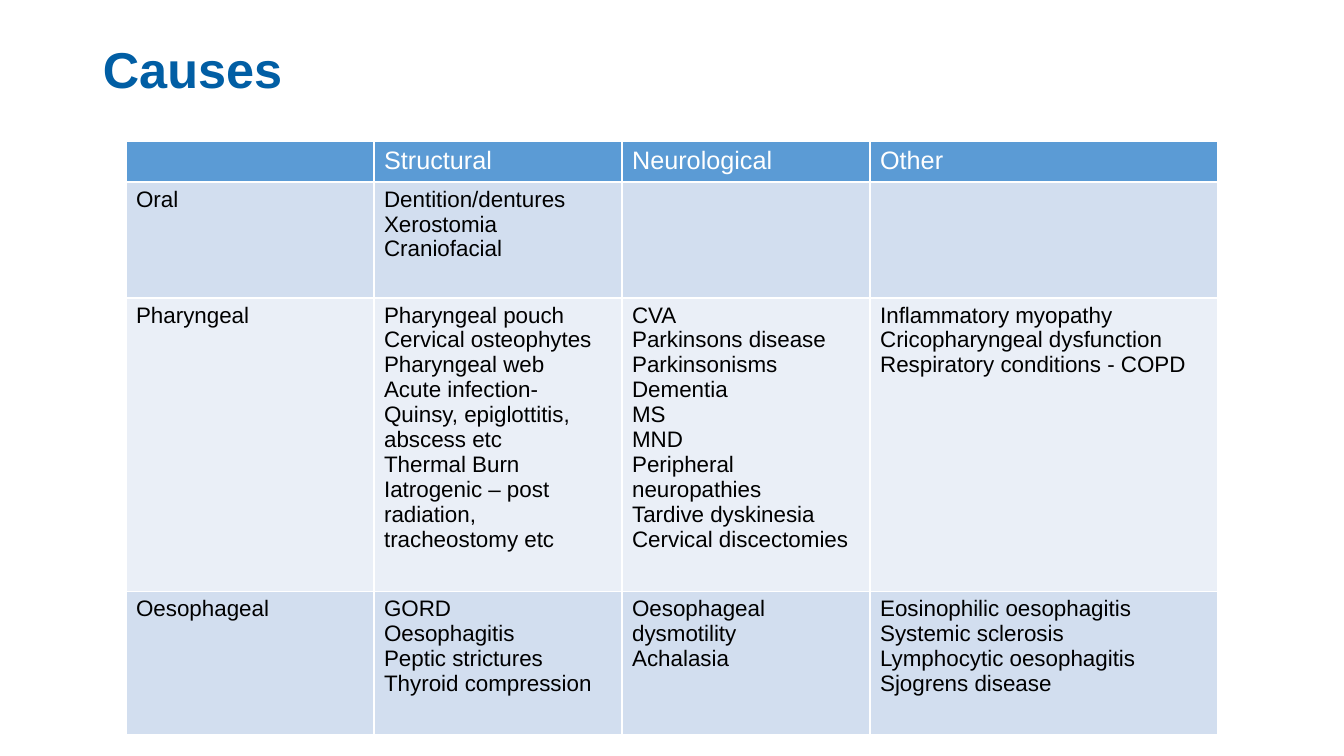
from lxml import etree
from pptx import Presentation
from pptx.dml.color import RGBColor
from pptx.enum.text import MSO_ANCHOR, PP_ALIGN
from pptx.oxml.ns import qn
from pptx.util import Inches, Pt

TOP = MSO_ANCHOR.TOP
LEFT = PP_ALIGN.LEFT

FONT = "Arial"
TITLE_BLUE = RGBColor(0x01, 0x5E, 0xA4)
HEADER_BLUE = RGBColor(0x5B, 0x9B, 0xD5)
BAND_DARK = RGBColor(0xD2, 0xDE, 0xEF)
BAND_LIGHT = RGBColor(0xEA, 0xEF, 0xF7)
WHITE = RGBColor(0xFF, 0xFF, 0xFF)
BLACK = RGBColor(0x00, 0x00, 0x00)

COL_WIDTHS = [2.46, 2.46, 2.46, 3.45]
ROW_HEIGHTS = [0.36, 1.15, 2.91, 1.42]
CAUSES = [
    [[], ["Structural"], ["Neurological"], ["Other"]],
    [["Oral"], ["Dentition/dentures", "Xerostomia", "Craniofacial"], [], []],
    [
        ["Pharyngeal"],
        ["Pharyngeal pouch", "Cervical osteophytes", "Pharyngeal web",
         "Acute infection- Quinsy, epiglottitis, abscess etc",
         "Thermal Burn", "Iatrogenic – post radiation, tracheostomy etc"],
        ["CVA", "Parkinsons disease", "Parkinsonisms", "Dementia", "MS", "MND",
         "Peripheral neuropathies", "Tardive dyskinesia",
         "Cervical discectomies"],
        ["Inflammatory myopathy", "Cricopharyngeal dysfunction",
         "Respiratory conditions - COPD"],
    ],
    [
        ["Oesophageal"],
        ["GORD", "Oesophagitis", "Peptic strictures", "Thyroid compression"],
        ["Oesophageal dysmotility", "Achalasia"],
        ["Eosinophilic oesophagitis", "Systemic sclerosis",
         "Lymphocytic oesophagitis", "Sjogrens disease"],
    ],
]


def add_run(p, text, size, color, bold=False):
    r = p.add_run()
    r.text = text
    r.font.name = FONT
    r.font.size = Pt(size)
    r.font.bold = bold
    r.font.color.rgb = color


def set_borders(cell, color, width):
    tc_pr = cell._tc.get_or_add_tcPr()
    for side in ("lnL", "lnR", "lnT", "lnB"):
        ln = etree.SubElement(tc_pr, qn(f"a:{side}"), w=str(Pt(width)))
        fill = etree.SubElement(ln, qn("a:solidFill"))
        etree.SubElement(fill, qn("a:srgbClr"), val=str(color))


def fill_cell(cell, lines, size, color, background):
    set_borders(cell, WHITE, 1)
    cell.fill.solid()
    cell.fill.fore_color.rgb = background
    tf = cell.text_frame
    for i, line in enumerate(lines):
        p = tf.add_paragraph() if i else tf.paragraphs[0]
        add_run(p, line, size, color)


def add_title(slide, text):
    title = slide.shapes.title
    title.left, title.top = Inches(0.92), Inches(0.4)
    title.width, title.height = Inches(11.5), Inches(1.45)
    tf = title.text_frame
    tf.vertical_anchor = TOP
    p = tf.paragraphs[0]
    p.alignment = LEFT
    p.line_spacing = 0.9
    add_run(p, text, 36, TITLE_BLUE, bold=True)


def add_causes_table(slide):
    frame = slide.shapes.add_table(
        len(ROW_HEIGHTS), len(COL_WIDTHS), Inches(1.25), Inches(1.4),
        Inches(sum(COL_WIDTHS)), Inches(sum(ROW_HEIGHTS)))
    table = frame.table
    for column, width in zip(table.columns, COL_WIDTHS):
        column.width = Inches(width)
    for row, height in zip(table.rows, ROW_HEIGHTS):
        row.height = Inches(height)
    for i, row in enumerate(CAUSES):
        if i == 0:
            style = (18, WHITE, HEADER_BLUE)
        else:
            style = (16, BLACK, BAND_DARK if i % 2 else BAND_LIGHT)
        for j, lines in enumerate(row):
            fill_cell(table.cell(i, j), lines, *style)


def main():
    prs = Presentation()
    prs.slide_width, prs.slide_height = Inches(13.33), Inches(7.5)
    slide = prs.slides.add_slide(prs.slide_layouts[5])
    add_title(slide, "Causes")
    add_causes_table(slide)
    prs.save("out.pptx")


if __name__ == "__main__":
    main()
